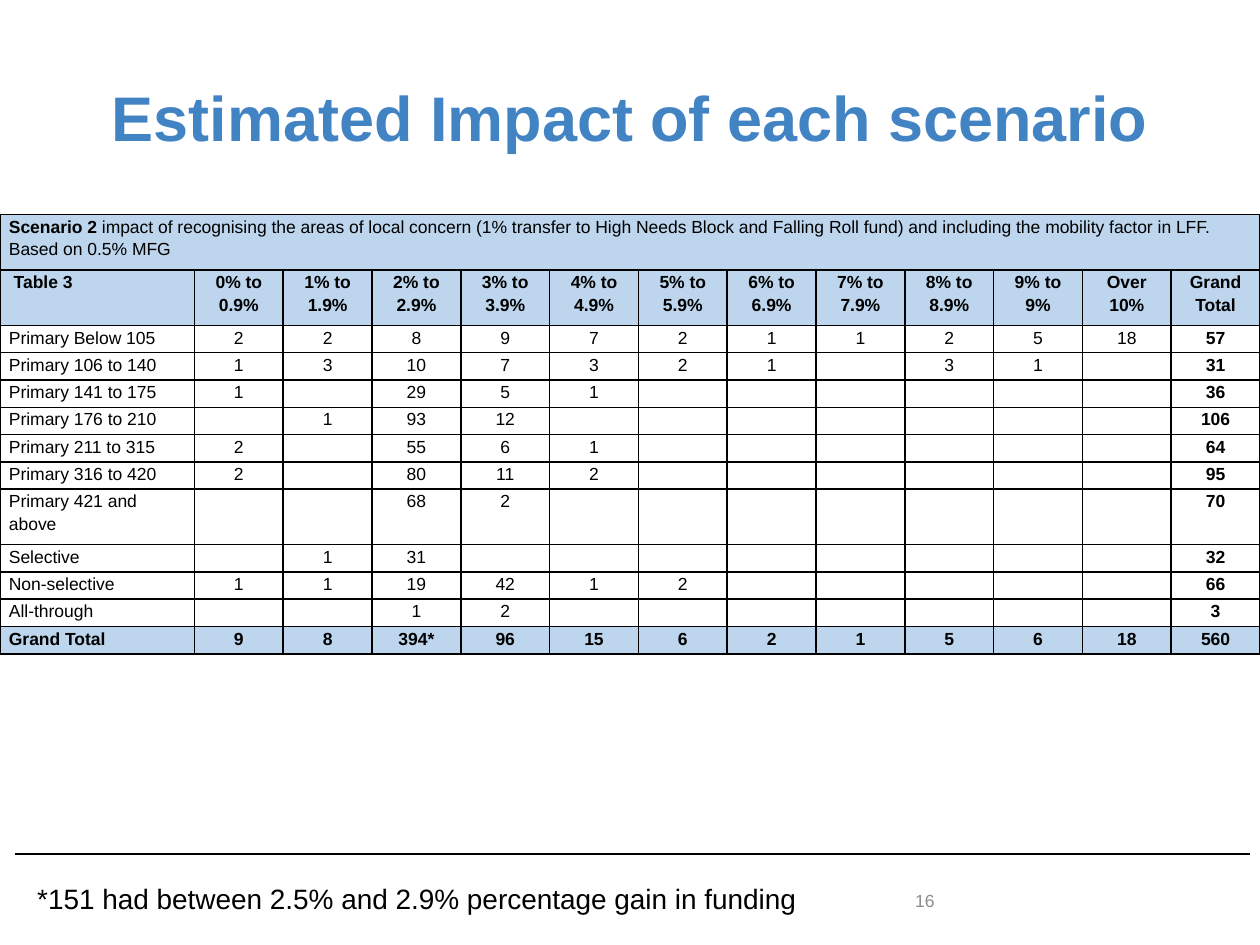
from lxml import etree
from pptx import Presentation
from pptx import util as u
from pptx.dml.color import RGBColor
from pptx.enum import shapes, text
from pptx.oxml.ns import qn

COLORS = {"title": "4283C4", "text": "000000", "line": "000000",
          "band": "BDD6EE", "number": "8C8C8C"}
SLIDE_W, SLIDE_H = 25.4, 19.05
BAND_W = 1.79
LINE_H = 0.55

CAPTION = [
    ("Scenario 2", True),
    (" impact of recognising the areas of local concern (1% transfer to High "
     "Needs Block and Falling Roll fund) and including the mobility factor in "
     "LFF. Based on 0.5% MFG", False),
]
HEADER = [" Table 3", "0% to 0.9%", "1% to 1.9%", "2% to 2.9%", "3% to 3.9%",
          "4% to 4.9%", "5% to 5.9%", "6% to 6.9%", "7% to 7.9%",
          "8% to 8.9%", "9% to 9%", "Over 10%", "Grand Total"]
# One value per column; "-" stands for an empty cell.
COUNTS = {
    "Primary Below 105": "2 2 8 9 7 2 1 1 2 5 18 57",
    "Primary 106 to 140": "1 3 10 7 3 2 1 - 3 1 - 31",
    "Primary 141 to 175": "1 - 29 5 1 - - - - - - 36",
    "Primary 176 to 210": "- 1 93 12 - - - - - - - 106",
    "Primary 211 to 315": "2 - 55 6 1 - - - - - - 64",
    "Primary 316 to 420": "2 - 80 11 2 - - - - - - 95",
    "Primary 421 and above": "- - 68 2 - - - - - - - 70",
    "Selective": "- 1 31 - - - - - - - - 32",
    "Non-selective": "1 1 19 42 1 2 - - - - - 66",
    "All-through": "- - 1 2 - - - - - - - 3",
    "Grand Total": "9 8 394* 96 15 6 2 1 5 6 18 560",
}


def rgb(name):
    return RGBColor.from_string(COLORS[name])


class SlideBuilder:
    font = "Arial"

    def __init__(self, prs):
        self.s = prs.slides.add_slide(prs.slide_layouts[5])

    def run(self, p, content, size, color="text", bold=False):
        r = p.add_run()
        r.text = content
        r.font.name = self.font
        r.font.size = u.Pt(size)
        r.font.bold = bold
        r.font.color.rgb = rgb(color)

    def place(self, sp, x, y, w, h):
        sp.left, sp.top, sp.width, sp.height = map(u.Cm, (x, y, w, h))

    def title(self, content, x, y, w, h):
        sp = self.s.shapes.title
        self.place(sp, x, y, w, h)
        tf = sp.text_frame
        tf.vertical_anchor = text.MSO_ANCHOR.MIDDLE
        p = tf.paragraphs[0]
        p.alignment = text.PP_ALIGN.CENTER
        self.run(p, content, 36, "title", True)

    def label(self, content, x, y, w, h, size, color="text",
              anchor=text.MSO_ANCHOR.TOP):
        sp = self.s.shapes.add_textbox(*map(u.Cm, (x, y, w, h)))
        tf = sp.text_frame
        tf.word_wrap = True
        tf.vertical_anchor = anchor
        self.run(tf.paragraphs[0], content, size, color)

    def rule(self, x1, x2, y):
        line = self.s.shapes.add_connector(
            shapes.MSO_CONNECTOR.STRAIGHT, *map(u.Cm, (x1, y, x2, y)))
        line.line.color.rgb = rgb("line")
        line.line.width = u.Pt(1)
        etree.SubElement(line._element.spPr, qn("a:effectLst"))

    def borders(self, cell):
        tc_pr = cell._tc.get_or_add_tcPr()
        for side in ("a:lnL", "a:lnR", "a:lnT", "a:lnB"):
            ln = etree.SubElement(tc_pr, qn(side), w=str(u.Pt(1)))
            fill = etree.SubElement(ln, qn("a:solidFill"))
            etree.SubElement(fill, qn("a:srgbClr"), val=COLORS["line"])

    def cell(self, cell, runs, centred, banded):
        self.borders(cell)
        if banded:
            cell.fill.solid()
            cell.fill.fore_color.rgb = rgb("band")
        else:
            cell.fill.background()
        cell.margin_left = cell.margin_right = u.Cm(0.18)
        cell.margin_top = cell.margin_bottom = 0
        p = cell.text_frame.paragraphs[0]
        if centred:
            p.alignment = text.PP_ALIGN.CENTER
        p.line_spacing = 1.15
        p.space_after = u.Pt(10)
        for content, bold in runs:
            self.run(p, content, 10, bold=bold)
        if not runs:  # keeps an empty cell from growing its row
            etree.SubElement(p._p, qn("a:endParaRPr"), sz="1000")

    def table(self, caption, header, counts, y):
        body = [[name, *values.split()] for name, values in counts.items()]
        rows = [header, *body]
        n_rows, n_cols = len(rows) + 1, len(header)
        tall = {0, 1, 1 + rows.index(next(
            row for row in body if row[0] == "Primary 421 and above"))}
        heights = [1.12 if i in tall else LINE_H for i in range(n_rows)]
        frame = self.s.shapes.add_table(
            n_rows, n_cols, 0, u.Cm(y), u.Cm(SLIDE_W), u.Cm(sum(heights)))
        t = frame.table
        t.first_row = t.horz_banding = False
        for row, height in zip(t.rows, heights):
            row.height = u.Cm(height)
        for col in t.columns:
            col.width = u.Cm(BAND_W)
        t.columns[0].width = u.Cm(SLIDE_W - BAND_W * (n_cols - 1))

        for j in range(n_cols):
            self.cell(t.cell(0, j), [] if j else caption, False, True)
        t.cell(0, 0).merge(t.cell(0, n_cols - 1))
        for i, row in enumerate(rows, 1):
            banded = i in (1, n_rows - 1)
            for j, value in enumerate(row):
                bold = banded or j == n_cols - 1
                runs = [] if value == "-" else [(value, bold)]
                self.cell(t.cell(i, j), runs, j > 0, banded)


def main():
    prs = Presentation()
    prs.slide_width, prs.slide_height = u.Cm(SLIDE_W), u.Cm(SLIDE_H)
    b = SlideBuilder(prs)
    b.rule(0.3, 25.2, 17.22)
    b.label("16", 18.2, 17.65, 5.93, 1.01, 10, "number",
            text.MSO_ANCHOR.MIDDLE)
    b.table(CAPTION, HEADER, COUNTS, 4.32)
    b.label("*151 had between 2.5% and 2.9% percentage gain in funding",
            0.5, 17.65, 16.6, 0.94, 16)
    b.title("Estimated Impact of each scenario", 1.27, 0.76, 22.86, 3.18)
    prs.save("out.pptx")


if __name__ == "__main__":
    main()
